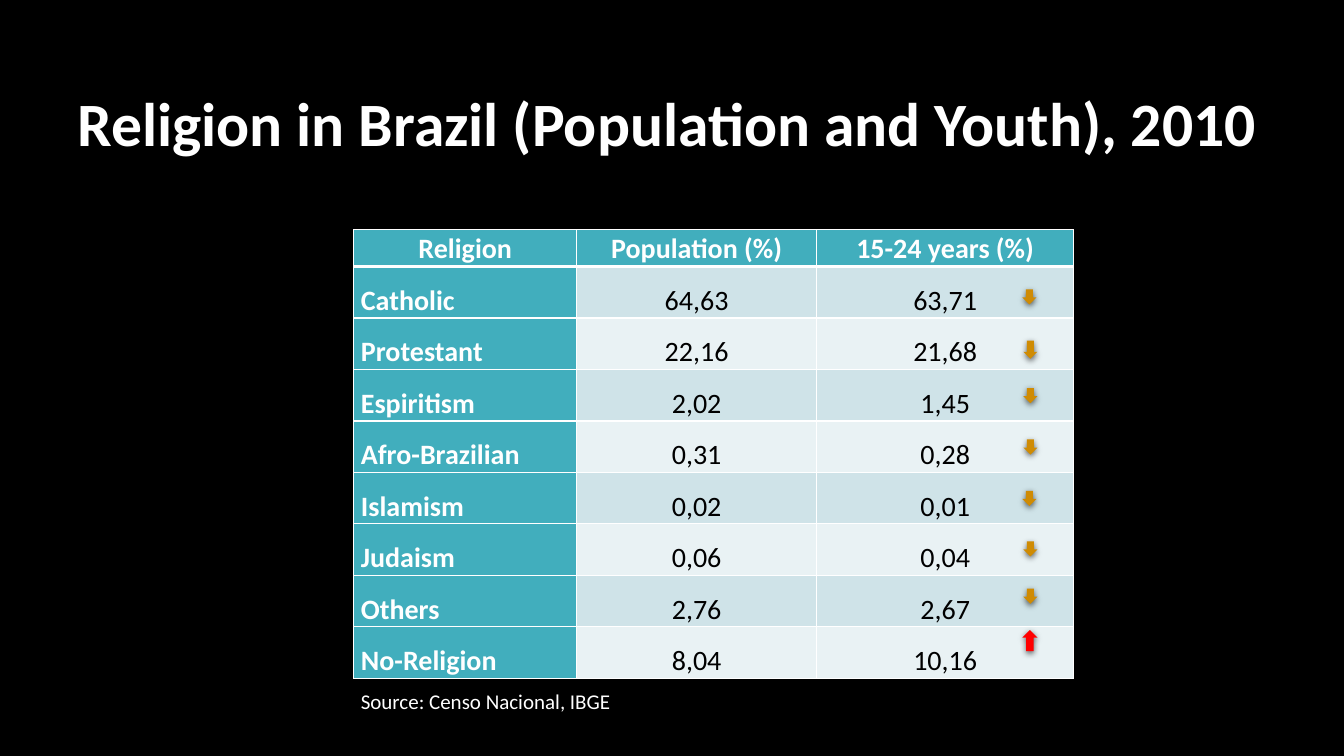
from dataclasses import dataclass
from typing import Any

from lxml.etree import SubElement
from pptx import Presentation
from pptx.dml.color import RGBColor
from pptx.enum.shapes import MSO_SHAPE
from pptx.enum.text import MSO_ANCHOR, MSO_AUTO_SIZE, PP_ALIGN
from pptx.oxml import parse_xml
from pptx.oxml.ns import nsdecls, qn
from pptx.util import Inches, Pt


@dataclass(frozen=True)
class Theme:
    font: str = "Calibri"
    background: str = "000000"
    light: str = "FFFFFF"
    dark: str = "000000"
    teal: str = "41AEBD"
    bands: tuple[str, str] = ("CFE3E8", "E9F2F4")
    fall: str = "CF8B03"
    rise: str = "FF0000"
    title_size: float = 44
    table_size: float = 20
    source_size: float = 15


@dataclass(frozen=True)
class Religion:
    name: str
    population: str
    youth: str
    arrow_left: float
    arrow_top: float
    arrow_height: float = 0.15
    rising: bool = False


THEME = Theme()
HEADINGS = ("Religion", "Population (%)", "15-24 years (%)")
RELIGIONS = (
    Religion("Catholic", "64,63", "63,71", 10.14, 2.87),
    Religion("Protestant", "22,16", "21,68", 10.15, 3.38, 0.18),
    Religion("Espiritism", "2,02", "1,45", 10.15, 3.85),
    Religion("Afro-Brazilian", "0,31", "0,28", 10.15, 4.36),
    Religion("Islamism", "0,02", "0,01", 10.14, 4.87),
    Religion("Judaism", "0,06", "0,04", 10.15, 5.37),
    Religion("Others", "2,76", "2,67", 10.15, 5.84),
    Religion("No-Religion", "8,04", "10,16", 10.14, 6.25, 0.21, True),
)
COLUMN_WIDTHS = (2.21, 2.38, 2.55)
HEADER_HEIGHT, ROW_HEIGHT = 0.36, 0.48


def set_attrs(target: Any, values: dict[str, Any]) -> None:
    for name, value in values.items():
        setattr(target, name, value)


def write(tf: Any, text: str, size: float, color: str, bold: bool = False,
          align: PP_ALIGN = PP_ALIGN.LEFT, spacing: float = 1.0) -> None:
    p = tf.paragraphs[0]
    set_attrs(p, {"alignment": align, "line_spacing": spacing})
    r = p.add_run()
    r.text = text
    set_attrs(r.font, {"name": THEME.font, "size": Pt(size), "bold": bold})
    r.font.color.rgb = RGBColor.from_string(color)


def add_borders(cell: Any, widths: dict[str, float]) -> None:
    tc_pr = cell._tc.get_or_add_tcPr()
    for i, (side, width) in enumerate(widths.items()):
        tc_pr.insert(i, parse_xml(
            f'<a:ln{side} {nsdecls("a")} w="{Pt(width)}"><a:solidFill>'
            f'<a:srgbClr val="{THEME.light}"/></a:solidFill></a:ln{side}>'))


def format_cell(cell: Any, text: str, row: int, col: int) -> None:
    header, label = row == 0, col == 0
    strong = header or label
    set_attrs(cell, {
        "margin_left": Inches(0.07), "margin_right": Inches(0.07),
        "margin_top": 0, "margin_bottom": 0,
        "vertical_anchor": MSO_ANCHOR.TOP if header else MSO_ANCHOR.BOTTOM,
    })
    cell.fill.solid()
    fill = THEME.teal if strong else THEME.bands[(row - 1) % 2]
    cell.fill.fore_color.rgb = RGBColor.from_string(fill)
    add_borders(cell, {"L": 1, "R": 1, "T": 3 if row == 1 else 1, "B": 3 if header else 1})
    write(cell.text_frame, text, THEME.table_size,
          THEME.light if strong else THEME.dark, strong,
          PP_ALIGN.LEFT if label and not header else PP_ALIGN.CENTER,
          1.07 if header else 1.5)


def add_religion_table(slide: Any) -> None:
    rows = [HEADINGS, *((x.name, x.population, x.youth) for x in RELIGIONS)]
    heights = [HEADER_HEIGHT] + [ROW_HEIGHT] * len(RELIGIONS)
    table = slide.shapes.add_table(
        len(rows), len(HEADINGS), Inches(3.51), Inches(2.28),
        Inches(sum(COLUMN_WIDTHS)), Inches(sum(heights))).table
    for column, width in zip(table.columns, COLUMN_WIDTHS):
        column.width = Inches(width)
    for i, (values, height) in enumerate(zip(rows, heights)):
        table.rows[i].height = Inches(height)
        for j, text in enumerate(values):
            format_cell(table.cell(i, j), text, i, j)


def add_trend_arrow(slide: Any, religion: Religion) -> None:
    kind, color, width = (
        (MSO_SHAPE.UP_ARROW, THEME.rise, 0.15) if religion.rising
        else (MSO_SHAPE.DOWN_ARROW, THEME.fall, 0.14))
    sp = slide.shapes.add_shape(
        kind, Inches(religion.arrow_left), Inches(religion.arrow_top),
        Inches(width), Inches(religion.arrow_height))
    sp.fill.solid()
    sp.fill.fore_color.rgb = RGBColor.from_string(color)
    sp.line.fill.background()
    sp.shadow.inherit = False
    effects = sp._element.spPr.find(qn("a:effectLst"))
    shadow = SubElement(effects, qn("a:outerShdw"), blurRad=str(Pt(4.5)),
                        dist=str(Pt(1.5)), dir="5400000", rotWithShape="0")
    shade = SubElement(shadow, qn("a:srgbClr"), val=THEME.dark)
    SubElement(shade, qn("a:alpha"), val="63000")


def add_title(slide: Any) -> None:
    title = slide.shapes.title
    set_attrs(title, {"left": Inches(0.67), "top": Inches(0.39),
                      "width": Inches(12), "height": Inches(1.25)})
    tf = title.text_frame
    set_attrs(tf, {"word_wrap": True, "auto_size": MSO_AUTO_SIZE.NONE,
                   "vertical_anchor": MSO_ANCHOR.BOTTOM})
    write(tf, "Religion in Brazil (Population and Youth), 2010",
          THEME.title_size, THEME.light, True, spacing=0.9)


def add_source(slide: Any) -> None:
    tf = slide.shapes.add_textbox(
        Inches(3.48), Inches(6.78), Inches(2.73), Inches(0.35)).text_frame
    set_attrs(tf, {"word_wrap": False, "vertical_anchor": MSO_ANCHOR.MIDDLE})
    write(tf, "Source: Censo Nacional, IBGE", THEME.source_size, THEME.light)


def main() -> None:
    prs = Presentation()
    set_attrs(prs, {"slide_width": Inches(13.33), "slide_height": Inches(7.5)})
    slide = prs.slides.add_slide(prs.slide_layouts.get_by_name("Title Only"))
    slide.background.fill.solid()
    slide.background.fill.fore_color.rgb = RGBColor.from_string(THEME.background)
    add_title(slide)
    add_religion_table(slide)
    for religion in RELIGIONS:
        add_trend_arrow(slide, religion)
    add_source(slide)
    prs.save("out.pptx")


if __name__ == "__main__":
    main()
